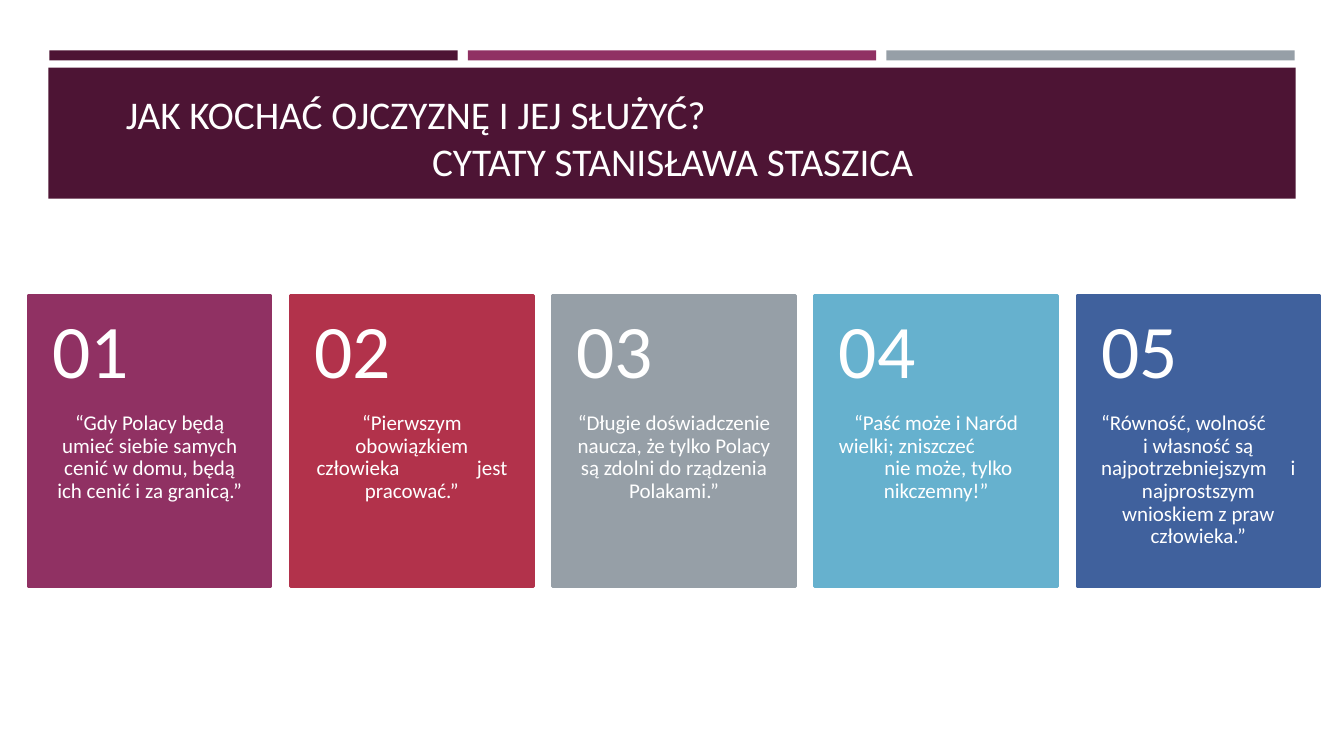
from dataclasses import dataclass

from lxml import etree
from pptx import Presentation
from pptx.dml.color import RGBColor
from pptx.enum.shapes import MSO_SHAPE
from pptx.enum.text import MSO_ANCHOR, PP_ALIGN
from pptx.oxml.ns import qn
from pptx.slide import Slide
from pptx.util import Inches, Pt

RECTANGLE = MSO_SHAPE.RECTANGLE
TOP, MIDDLE, BOTTOM = MSO_ANCHOR.TOP, MSO_ANCHOR.MIDDLE, MSO_ANCHOR.BOTTOM
LEFT, CENTER = PP_ALIGN.LEFT, PP_ALIGN.CENTER

FONT = "Calibri"
COLORS = {
    "plum": "4D1434",
    "purple": "903163",
    "red": "B2324B",
    "gray": "969FA7",
    "sky": "66B1CE",
    "blue": "40619D",
    "white": "FFFFFF",
}

CARD_LEFT, CARD_TOP, CARD_STEP = 0.28, 2.93, 2.6
CARD_WIDTH, CARD_HEIGHT, NUMBER_HEIGHT = 2.41, 2.89, 1.16
CARD_INSET = 0.24


@dataclass(frozen=True)
class Box:
    left: float
    top: float
    width: float
    height: float

    def lengths(self) -> list[Inches]:
        return [Inches(value) for value in (self.left, self.top, self.width, self.height)]


@dataclass(frozen=True)
class Line:
    """One paragraph; indent and tab stop are in inches."""
    text: str
    align: PP_ALIGN = CENTER
    indent: float = 0
    tab: float = 0


@dataclass(frozen=True)
class TextStyle:
    size: float
    anchor: MSO_ANCHOR
    insets: tuple[float, float, float, float]
    spacing: float = 0.9


@dataclass(frozen=True)
class Card:
    color: str
    quote: tuple[Line, ...]


TITLE_STYLE = TextStyle(28, BOTTOM, (0.1, 0.05, 0.1, 0.05), 1.0)
NUMBER_STYLE = TextStyle(54, MIDDLE, (CARD_INSET, 0.18, CARD_INSET, 0.18))
QUOTE_STYLE = TextStyle(15, TOP, (CARD_INSET, 0, CARD_INSET, 0.36))

TITLE = (
    Line("JAK KOCHAĆ OJCZYZNĘ I JEJ SŁUŻYĆ?", LEFT, indent=0.51),
    Line("CYTATY STANISŁAWA STASZICA"),
)
CARDS = (
    Card("purple", (
        Line("“Gdy Polacy będą umieć siebie samych cenić w domu, będą ich cenić i za granicą.”"),
    )),
    Card("red", (
        Line("“Pierwszym obowiązkiem"),
        Line("człowieka\tjest", LEFT, indent=0.02, tab=1.59),
        Line("pracować.”"),
    )),
    Card("gray", (
        Line("“Długie doświadczenie naucza, że tylko Polacy są zdolni do rządzenia Polakami.”"),
    )),
    Card("sky", (
        Line("“Paść może i Naród"),
        Line("wielki; zniszczeć", LEFT),
        Line("nie może, tylko", LEFT, indent=0.45),
        Line("nikczemny!”"),
    )),
    Card("blue", (
        Line("“Równość, wolność", LEFT),
        Line("i własność są"),
        Line("najpotrzebniejszym\ti", LEFT, tab=1.88),
        Line("najprostszym wnioskiem z praw człowieka.”"),
    )),
)


def add_rectangle(slide: Slide, box: Box, color: str, outline: float = 0) -> None:
    shape = slide.shapes.add_shape(RECTANGLE, *box.lengths())
    shape.shadow.inherit = False
    shape.fill.solid()
    shape.fill.fore_color.rgb = RGBColor.from_string(COLORS[color])
    if outline:
        shape.line.color.rgb = RGBColor.from_string(COLORS[color])
        shape.line.width = Pt(outline)
    else:
        shape.line.fill.background()


def add_text(slide: Slide, box: Box, lines: tuple[Line, ...], style: TextStyle) -> None:
    frame = slide.shapes.add_textbox(*box.lengths()).text_frame
    frame.word_wrap = True
    frame.vertical_anchor = style.anchor
    (frame.margin_left, frame.margin_top,
     frame.margin_right, frame.margin_bottom) = map(Inches, style.insets)
    for index, line in enumerate(lines):
        paragraph = frame.add_paragraph() if index else frame.paragraphs[0]
        paragraph.text = line.text
        properties = paragraph._p.get_or_add_pPr()
        properties.set("marL", str(Inches(line.indent)))
        if line.tab:
            tabs = etree.SubElement(properties, qn("a:tabLst"))
            etree.SubElement(tabs, qn("a:tab"), pos=str(Inches(line.tab)), algn="l")
        paragraph.alignment = line.align
        paragraph.line_spacing = style.spacing
        paragraph.font.name = FONT
        paragraph.font.size = Pt(style.size)
        paragraph.font.color.rgb = RGBColor.from_string(COLORS["white"])


def add_header(slide: Slide) -> None:
    for index, color in enumerate(("plum", "purple", "gray")):
        add_rectangle(slide, Box(0.49 + 4.15 * index, 0.5, 4.05, 0.1), color)
    add_rectangle(slide, Box(0.48, 0.67, 12.37, 1.3), "plum")
    add_text(slide, Box(0.64, 0.77, 12.06, 1.11), TITLE, TITLE_STYLE)


def add_card(slide: Slide, index: int, card: Card) -> None:
    left = CARD_LEFT + CARD_STEP * index
    add_rectangle(slide, Box(left, CARD_TOP, CARD_WIDTH, CARD_HEIGHT), card.color, 1.75)
    quote_box = Box(left, CARD_TOP + NUMBER_HEIGHT, CARD_WIDTH, CARD_HEIGHT - NUMBER_HEIGHT)
    add_text(slide, quote_box, card.quote, QUOTE_STYLE)
    number = Line(f"{index + 1:02}", LEFT)
    add_text(slide, Box(left, CARD_TOP, CARD_WIDTH, NUMBER_HEIGHT), (number,), NUMBER_STYLE)


def main() -> None:
    presentation = Presentation()
    presentation.slide_width = Inches(13.33)
    presentation.slide_height = Inches(7.5)
    slide = presentation.slides.add_slide(presentation.slide_layouts[6])
    add_header(slide)
    for index, card in enumerate(CARDS):
        add_card(slide, index, card)
    presentation.save("out.pptx")


if __name__ == "__main__":
    main()
